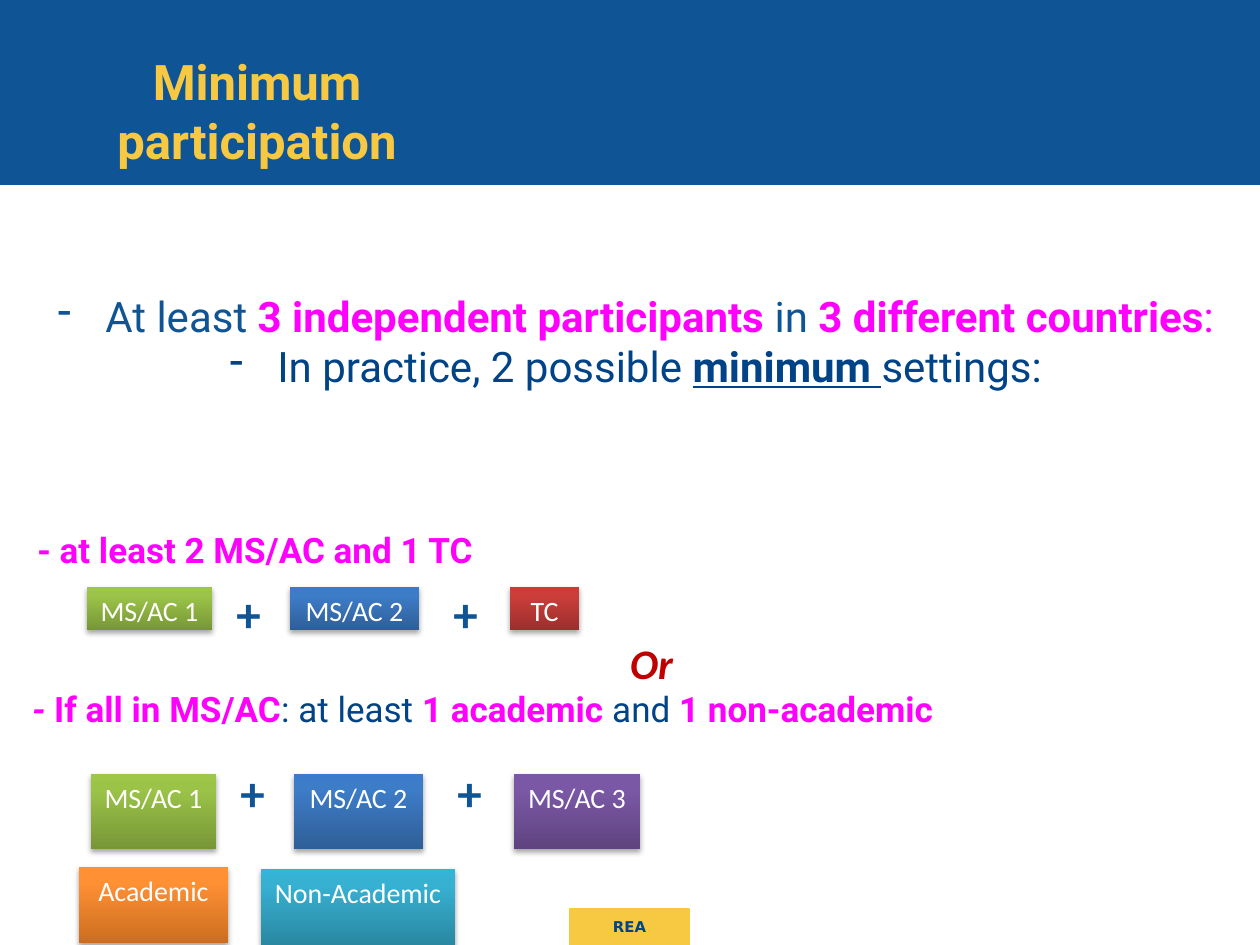
from copy import deepcopy

from pptx import Presentation
from pptx.dml.color import RGBColor
from pptx.enum.shapes import MSO_SHAPE
from pptx.enum.text import MSO_ANCHOR, PP_ALIGN
from pptx.oxml import parse_xml
from pptx.oxml.ns import nsdecls, qn
from pptx.util import Emu, Pt

SCALE = 914400 / 126  # EMU in one px

BLUE = RGBColor(0x0F, 0x54, 0x94)
NAVY = RGBColor(0x00, 0x43, 0x86)
GOLD = RGBColor(0xF7, 0xC9, 0x43)
PINK = RGBColor(0xFF, 0x00, 0xFF)
RED = RGBColor(0xC0, 0x00, 0x00)
WHITE = RGBColor(0xFF, 0xFF, 0xFF)


def ramp(*codes):
    return [RGBColor.from_string(code) for code in codes]


# Gradients from bottom to top
GREEN = ramp("779737", "9BC348", "9DC746")
AZURE = ramp("2F5F99", "3D7CC7", "3A7CCB")
BRICK = ramp("9C2F2D", "CB3E3A", "CE3B37")
PLUM = ramp("5F4480", "7B58A6", "7C57A8")
AMBER = ramp("CC6E20", "FF9034", "FF9136")
TEAL = ramp("2A88A2", "37B1D2", "34B4D6")


def px(num):
    return Emu(round(num * SCALE))


def write(para, text, size=16, color=WHITE, font="Roboto", bold=False,
          italic=False, under=False, align=PP_ALIGN.CENTER):
    """Add one run to a paragraph."""
    para.alignment = align
    run = para.add_run()
    run.text = text
    face = run.font
    face.name, face.size = font, Pt(size)
    face.bold, face.italic, face.underline = bold, italic, under
    face.color.rgb = color


def frame(slide, x, y, w, h, wrap=True):
    body = slide.shapes.add_textbox(px(x), px(y), px(w), px(h)).text_frame
    body.word_wrap = wrap
    return body


def block(slide, x, y, w, h, fill):
    """Borderless rectangle, flat or with a gradient."""
    shape = slide.shapes.add_shape(MSO_SHAPE.RECTANGLE, px(x), px(y), px(w), px(h))
    shape.line.fill.background()
    shape.shadow.inherit = False
    if isinstance(fill, RGBColor):
        shape.fill.solid()
        shape.fill.fore_color.rgb = fill
        return shape
    shape.fill.gradient()
    shape.fill.gradient_angle = 90
    stops = shape._element.spPr.find(qn("a:gradFill")).find(qn("a:gsLst"))
    stops.append(deepcopy(stops[-1]))
    for stop, place, color in zip(shape.fill.gradient_stops, (0, 0.8, 1), fill):
        stop.position = place
        stop.color.rgb = color
    return shape


def shade(shape, blur):
    effects = shape._element.spPr.find(qn("a:effectLst"))
    effects.append(parse_xml(
        f'<a:outerShdw {nsdecls("a")} blurRad="{Pt(blur)}" dist="{Pt(1.8)}" '
        'dir="5400000" rotWithShape="0"><a:srgbClr val="000000">'
        '<a:alpha val="35000"/></a:srgbClr></a:outerShdw>'))


def card(slide, x, y, w, h, fill, text):
    shape = block(slide, x, y, w, h, fill)
    shade(shape, 3.1)
    body = shape.text_frame
    body.word_wrap = False
    body.vertical_anchor = MSO_ANCHOR.TOP
    write(body.paragraphs[0], text, font="Calibri")


def header(slide, x, y, w, h):
    block(slide, x, y, w, h, BLUE)
    body = frame(slide, x, y + 45, 514, 131)
    write(body.paragraphs[0], "Minimum participation", size=28, color=GOLD, bold=True)


def footer(slide, x, y, w, h):
    tab = block(slide, x, y, w, h, GOLD)
    tab.line.color.rgb = GOLD
    tab.line.width = Pt(0.75)
    shade(tab, 0)
    body = frame(slide, x, y - 2, w, h + 4)
    body.vertical_anchor = MSO_ANCHOR.MIDDLE
    write(body.paragraphs[0], "REA", size=8.5, color=NAVY, font="DejaVu Sans", bold=True)


def rules(slide, x, y, w, h):
    """Two dashed points, centred."""
    body = frame(slide, x, y, w, h)
    points = [
        [("At least ", BLUE, {}),
         ("3 independent participants ", PINK, {"bold": True}),
         ("in ", BLUE, {}),
         ("3 different countries", PINK, {"bold": True}),
         (":", PINK, {})],
        [("In practice, 2 possible ", NAVY, {}),
         ("minimum ", NAVY, {"bold": True, "under": True}),
         ("settings:", NAVY, {})],
    ]
    for num, parts in enumerate(points):
        para = body.add_paragraph() if num else body.paragraphs[0]
        props = para._p.get_or_add_pPr()
        props.set("marL", str(px(48)))
        props.set("indent", str(px(-48)))
        props.append(parse_xml(f'<a:buChar {nsdecls("a")} char="-"/>'))
        for text, color, style in parts:
            write(para, text, size=24, color=color, **style)


def chain(slide, x, y, h, cards, rise):
    """Three cards with a plus in each gap."""
    for left, (w, fill, text) in zip((0, 203, 423), cards):
        card(slide, x + left, y, w, h, fill, text)
    for left in (137, 354):
        body = frame(slide, x + left, y - rise, 49, 64, wrap=False)
        write(body.paragraphs[0], "+", size=28, color=BLUE, font="Calibri", bold=True)


def mixed(slide, x, y, w):
    """First setting: two member states and a third country."""
    body = frame(slide, x, y, w, 50)
    write(body.paragraphs[0], "- at least 2 MS/AC and 1 TC", size=20, color=PINK,
          bold=True, align=PP_ALIGN.JUSTIFY)
    chain(slide, x + 62, y + 65, 43,
          [(125, GREEN, "MS/AC 1"), (129, AZURE, "MS/AC 2"), (69, BRICK, "TC")], 10)


def inner(slide, x, y, w):
    """Second setting: all in member states."""
    chain(slide, x + 71, y + 143, 75,
          [(125, GREEN, "MS/AC 1"), (129, AZURE, "MS/AC 2"), (126, PLUM, "MS/AC 3")], 18)
    card(slide, x + 59, y + 236, 149, 76, AMBER, "Academic")
    card(slide, x + 241, y + 238, 194, 76, TEAL, "Non-Academic")

    body = frame(slide, x, y, w, 110)
    para = body.paragraphs[0]
    para._p.get_or_add_pPr().set("marL", str(px(216)))
    write(para, "Or", size=24, color=RED, font="Calibri", bold=True, italic=True)
    para = body.add_paragraph()
    for text, color, bold, italic in [
        ("- ", PINK, True, True),
        ("If all in MS/AC", PINK, True, False),
        (": at least ", NAVY, False, False),
        ("1 academic ", PINK, True, False),
        ("and ", NAVY, False, False),
        ("1 non-academic", PINK, True, False),
    ]:
        write(para, text, size=20, color=color, bold=bold, italic=italic,
              align=PP_ALIGN.JUSTIFY)


def main():
    deck = Presentation()
    deck.slide_width, deck.slide_height = px(1260), px(945)
    slide = deck.slides.add_slide(deck.slide_layouts[6])
    footer(slide, 570, 909, 119, 36)
    header(slide, 0, 0, 1260, 185)
    rules(slide, 35, 284, 1201, 214)
    mixed(slide, 25, 522, 1121)
    inner(slide, 20, 631, 1047)
    deck.save("out.pptx")


if __name__ == "__main__":
    main()
